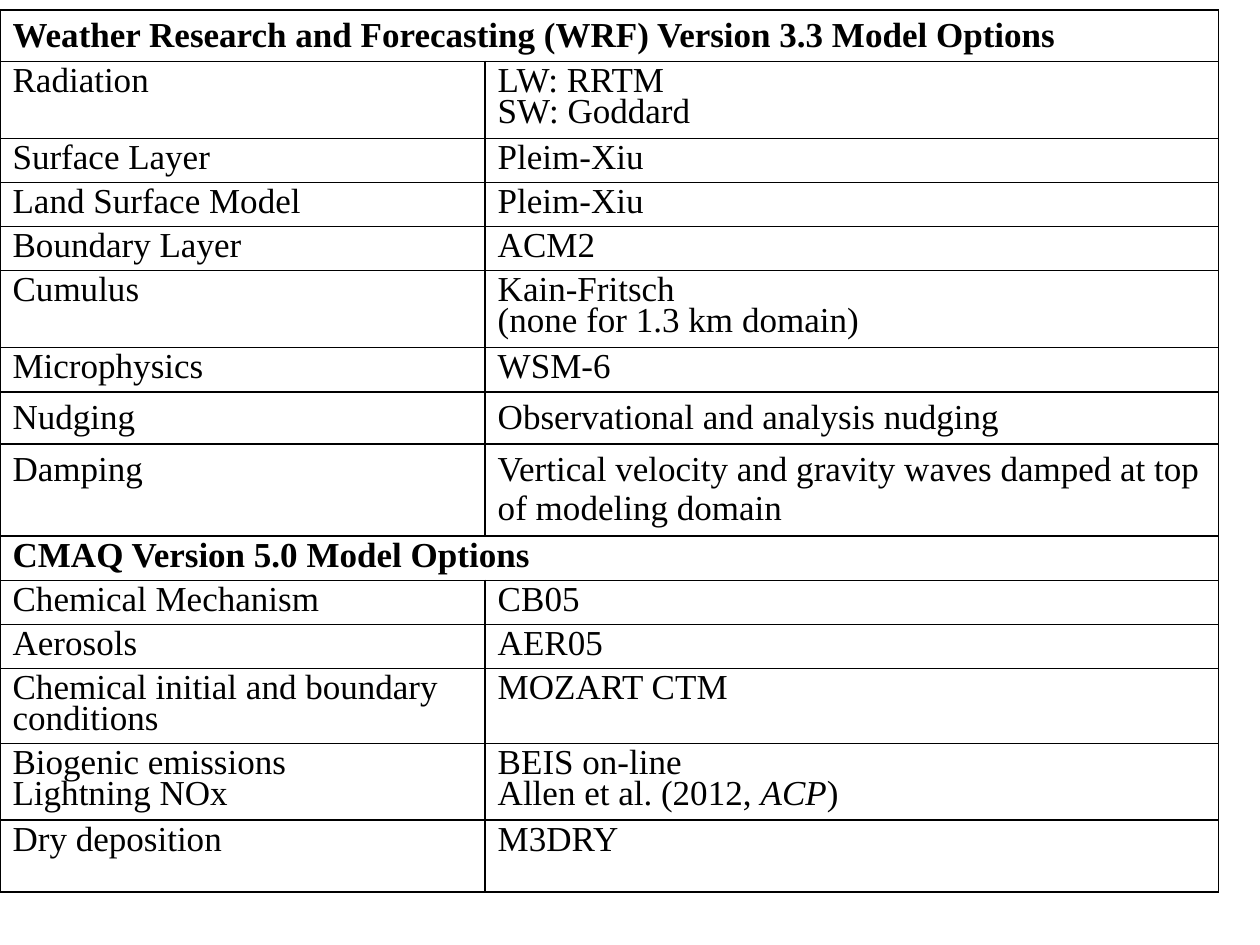
from lxml import etree
from pptx import Presentation
from pptx.dml.color import RGBColor
from pptx.oxml.ns import qn
from pptx.util import Cm, Pt

BLACK = RGBColor(0x00, 0x00, 0x00)
FONT = "Times New Roman"
BORDER_SIDES = ("a:lnL", "a:lnR", "a:lnT", "a:lnB")
TIGHT = 0.8
SINGLE = 1.0

# Label, value (None for a heading over both columns), row height in cm, line spacing.
# A newline starts a paragraph; asterisks enclose italics.
ROWS = [
    ("Weather Research and Forecasting (WRF) Version 3.3 Model Options", None, 0.89, SINGLE),
    ("Radiation", "LW: RRTM\nSW: Goddard", 1.55, TIGHT),
    ("Surface Layer", "Pleim-Xiu", 0.89, TIGHT),
    ("Land Surface Model", "Pleim-Xiu", 0.89, TIGHT),
    ("Boundary Layer", "ACM2", 0.89, TIGHT),
    ("Cumulus", "Kain-Fritsch\n(none for 1.3 km domain)", 1.55, TIGHT),
    ("Microphysics", "WSM-6", 0.89, TIGHT),
    ("Nudging", "Observational and analysis nudging", 1.05, SINGLE),
    ("Damping", "Vertical velocity and gravity waves damped at top of modeling domain",
     1.86, SINGLE),
    ("CMAQ Version 5.0 Model Options", None, 0.89, TIGHT),
    ("Chemical Mechanism", "CB05", 0.89, TIGHT),
    ("Aerosols", "AER05", 0.89, TIGHT),
    ("Chemical initial and boundary conditions", "MOZART CTM", 1.35, TIGHT),
    ("Biogenic emissions\nLightning NOx", "BEIS on-line\nAllen et al. (2012, *ACP*)",
     1.55, TIGHT),
    ("Dry deposition", "M3DRY", 1.45, TIGHT),
]
COLUMN_WIDTHS = (9.78, 14.78)


def write_text(tf, text, size=20, bold=False, spacing=TIGHT, color=BLACK):
    for i, line in enumerate(text.split("\n")):
        p = tf.paragraphs[0] if i == 0 else tf.add_paragraph()
        p.line_spacing = spacing
        for j, part in enumerate(line.split("*")):
            r = p.add_run()
            r.text = part
            r.font.name = FONT
            r.font.size = Pt(size)
            r.font.bold = bold
            r.font.italic = j % 2 == 1
            r.font.color.rgb = color


def add_borders(cell, width=1, color=BLACK):
    tc_pr = cell._tc.get_or_add_tcPr()
    for side in BORDER_SIDES:
        ln = etree.SubElement(tc_pr, qn(side), w=str(Pt(width)))
        fill = etree.SubElement(ln, qn("a:solidFill"))
        etree.SubElement(fill, qn("a:srgbClr"), val=str(color))


prs = Presentation()
prs.slide_width = Cm(25.4)
prs.slide_height = Cm(19.05)
s = prs.slides.add_slide(prs.slide_layouts[6])

frame = s.shapes.add_table(len(ROWS), len(COLUMN_WIDTHS), Cm(0), Cm(0.2),
                           Cm(sum(COLUMN_WIDTHS)), Cm(sum(row[2] for row in ROWS)))
table = frame.table
table.first_row = False
table.horz_banding = False
for column, width in zip(table.columns, COLUMN_WIDTHS):
    column.width = Cm(width)

for i, (label, value, height, spacing) in enumerate(ROWS):
    table.rows[i].height = Cm(height)
    label_cell, value_cell = table.cell(i, 0), table.cell(i, 1)
    for cell in (label_cell, value_cell):
        add_borders(cell)
        cell.fill.background()
    write_text(label_cell.text_frame, label, bold=value is None, spacing=spacing)
    if value is None:
        label_cell.merge(value_cell)
    else:
        write_text(value_cell.text_frame, value, spacing=spacing)

prs.save("out.pptx")
